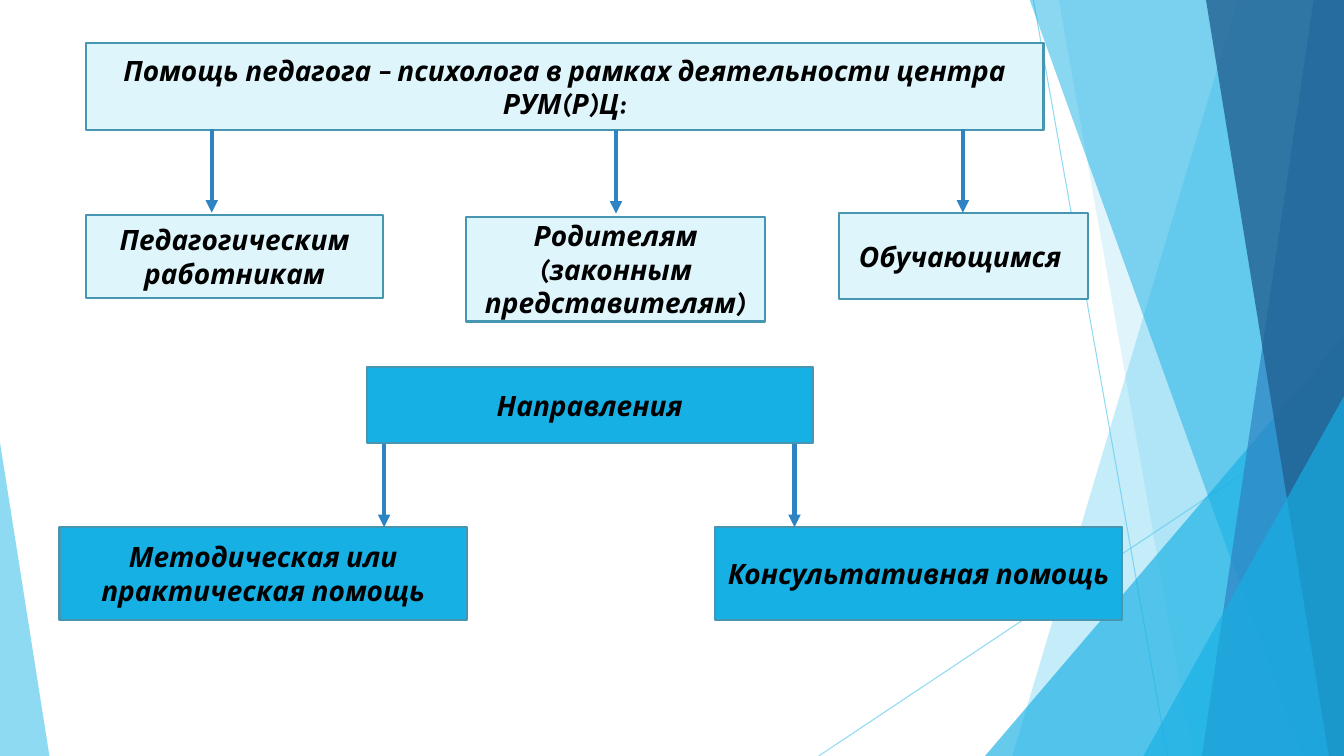
"""Build a slide showing who a centre's psychologist helps and in which directions."""
from lxml import etree
from pptx import Presentation
from pptx import util as u
from pptx.dml.color import RGBColor
from pptx.enum import shapes, text
from pptx.oxml import ns

WIDTH, HEIGHT = 13.33, 7.5
FONT = "Karla"
BLACK = RGBColor(0x00, 0x00, 0x00)
PALE = RGBColor(0xDF, 0xF5, 0xFC)
BRIGHT = RGBColor(0x17, 0xB0, 0xE4)
BORDER = RGBColor(0x46, 0x96, 0xB1)
SKY = RGBColor(0x5F, 0xCB, 0xEF)
BLUE = RGBColor(0x2E, 0x83, 0xC3)
NAVY = RGBColor(0x22, 0x62, 0x92)

THIN_LINES = [(10.25, 0, 11.58, HEIGHT), (WIDTH, 4.03, 8.12, HEIGHT)]

BAND, TRIANGLE = "band", "triangle"
FACETS = [
    (BAND, (12.28, 10.04), SKY, 36),
    (BAND, (10.5, 11.83), SKY, 20),
    (TRIANGLE, (9.77, 3.33, 3.56, 1), BRIGHT, 66),
    (BAND, (10.21, 12.91), BRIGHT, 50),
    (BAND, (13.03, 11.92), BLUE, 70),
    (BAND, (11.96, 13.18), NAVY, 80),
    (TRIANGLE, (11.34, 3.93, 1.99, 1), BRIGHT, 66),
    (TRIANGLE, (0, 4.39, 0.49, 0), SKY, 70),
]

BOXES = [
    ("Помощь педагога – психолога в рамках деятельности центра РУМ(Р)Ц:", 0.85, 0.43, 9.5, 0.86, PALE),
    ("Методическая или практическая помощь", 0.59, 5.23, 4.04, 0.92, BRIGHT),
    ("Консультативная помощь ", 7.09, 5.23, 4.04, 0.92, BRIGHT),
    ("Направления", 3.64, 3.64, 4.42, 0.76, BRIGHT),
    ("Педагогическим работникам", 0.85, 2.13, 2.95, 0.83, PALE),
    ("Родителям (законным представителям)", 4.62, 2.15, 2.97, 1.04, PALE),
    ("Обучающимся ", 8.32, 2.11, 2.47, 0.86, PALE),
]

ARROW_LENGTH = 0.83
ARROW_STARTS = [(2.1, 1.28), (6.11, 1.29), (9.55, 1.28), (7.88, 4.4), (3.81, 4.4)]


def set_opacity(fill, percent):
    color = fill._xPr.find(ns.qn("a:solidFill"))[0]
    etree.SubElement(color, ns.qn("a:alpha")).set("val", str(percent * 1000))


def add_line(slide, ends, color, width):
    line = slide.shapes.add_connector(
        shapes.MSO_CONNECTOR.STRAIGHT, *[u.Inches(value) for value in ends])
    line.line.color.rgb = color
    line.line.width = u.Pt(width)
    etree.SubElement(line._element.spPr, ns.qn("a:effectLst"))
    return line


def add_facet(slide, kind, geometry, color, opacity):
    if kind == BAND:
        top_x, bottom_x = geometry
        corners = [(top_x, -0.01), (WIDTH, -0.01), (WIDTH, HEIGHT), (bottom_x, HEIGHT)]
        points = [(u.Inches(x), u.Inches(y)) for x, y in corners]
        builder = slide.shapes.build_freeform(*points[0])
        builder.add_line_segments(points[1:], close=True)
        facet = builder.convert_to_shape()
    else:
        left, top, width, apex = geometry
        facet = slide.shapes.add_shape(
            shapes.MSO_SHAPE.ISOSCELES_TRIANGLE, u.Inches(left), u.Inches(top),
            u.Inches(width), u.Inches(HEIGHT - top))
        facet.adjustments[0] = apex
    facet.shadow.inherit = False
    facet.fill.solid()
    facet.fill.fore_color.rgb = color
    set_opacity(facet.fill, opacity)
    facet.line.fill.background()


def add_box(slide, label, left, top, width, height, color):
    box = slide.shapes.add_shape(
        shapes.MSO_SHAPE.RECTANGLE, u.Inches(left), u.Inches(top),
        u.Inches(width), u.Inches(height))
    box.shadow.inherit = False
    box.fill.solid()
    box.fill.fore_color.rgb = color
    box.line.color.rgb = BORDER
    box.line.width = u.Pt(1.5)
    frame = box.text_frame
    frame.word_wrap = True
    frame.vertical_anchor = text.MSO_ANCHOR.MIDDLE
    paragraph = frame.paragraphs[0]
    paragraph.alignment = text.PP_ALIGN.CENTER
    run = paragraph.add_run()
    run.text = label
    run.font.name = FONT
    run.font.size = u.Pt(20)
    run.font.bold = run.font.italic = True
    run.font.color.rgb = BLACK


def add_arrow(slide, x, y):
    arrow = add_line(slide, (x, y, x, y + ARROW_LENGTH), BLUE, 3)
    outline = arrow.line._get_or_add_ln()
    etree.SubElement(outline, ns.qn("a:tailEnd")).set("type", "triangle")


def main():
    presentation = Presentation()
    presentation.slide_width = u.Inches(WIDTH)
    presentation.slide_height = u.Inches(HEIGHT)
    slide = presentation.slides.add_slide(presentation.slide_layouts[6])
    for ends in THIN_LINES:
        line = add_line(slide, ends, SKY, 0.75)
        set_opacity(line.line.fill, 70)
    for facet in FACETS:
        add_facet(slide, *facet)
    for box in BOXES:
        add_box(slide, *box)
    for start in ARROW_STARTS:
        add_arrow(slide, *start)
    presentation.save("out.pptx")


if __name__ == "__main__":
    main()
